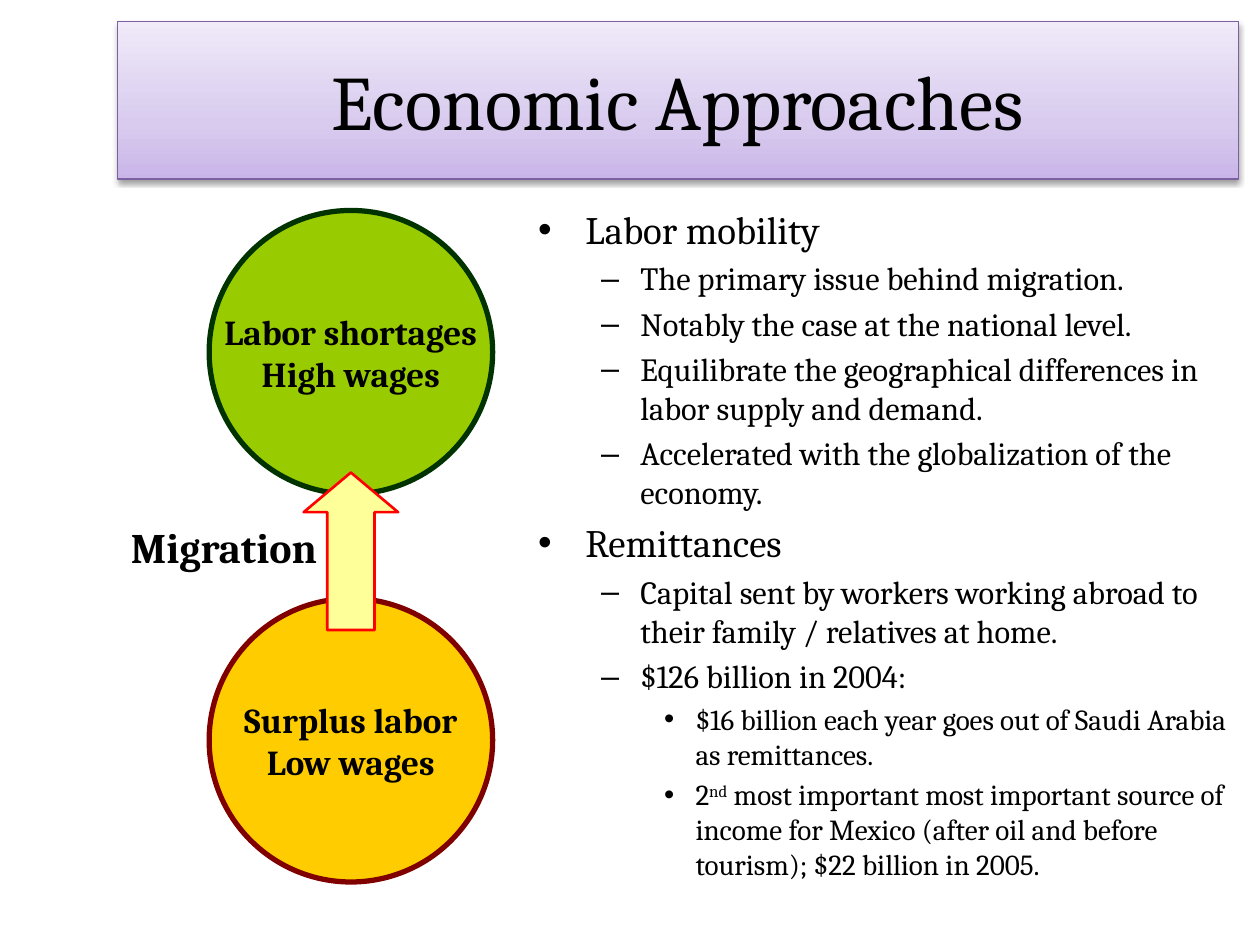
import copy
from dataclasses import dataclass

import pptx
import pptx.util
import pptx.dml.color
import pptx.enum.shapes
import pptx.enum.text
import pptx.oxml
import pptx.oxml.ns

Inches = pptx.util.Inches
Pt = pptx.util.Pt
RGB = pptx.dml.color.RGBColor
Shape = pptx.enum.shapes.MSO_SHAPE
Align = pptx.enum.text.PP_ALIGN
Anchor = pptx.enum.text.MSO_ANCHOR
Fit = pptx.enum.text.MSO_AUTO_SIZE

FONT = "Cambria"
BLACK = RGB(0, 0, 0)
PURPLE = RGB(0x7D, 0x60, 0xA0)
GREEN = RGB(0x99, 0xCC, 0x00)
FOREST = RGB(0x00, 0x33, 0x00)
GOLD = RGB(0xFF, 0xCC, 0x00)
MAROON = RGB(0x80, 0x00, 0x00)
CREAM = RGB(0xFF, 0xFF, 0x99)
RED = RGB(0xFF, 0x00, 0x00)
FADE = [(0, RGB(0xC9, 0xB5, 0xE8)), (0.35, RGB(0xD8, 0xCB, 0xEE)),
        (1, RGB(0xF0, 0xEA, 0xF9))]
SIZES = [22.2, 18.5, 16.6]


@dataclass
class Node:
    top: float
    fill: RGB
    edge: RGB
    text: str


@dataclass
class Point:
    level: int
    texts: list[str]  # every second text is raised


NODES = [
    Node(1.67, GREEN, FOREST, "Labor shortages\nHigh wages"),
    Node(4.75, GOLD, MAROON, "Surplus labor\nLow wages"),
]
POINTS = [
    Point(0, ["Labor mobility"]),
    Point(1, ["The primary issue behind migration."]),
    Point(1, ["Notably the case at the national level."]),
    Point(1, ["Equilibrate the geographical differences in labor supply and demand."]),
    Point(1, ["Accelerated with the globalization of the economy."]),
    Point(0, ["Remittances"]),
    Point(1, ["Capital sent by workers working abroad to their family / relatives at home."]),
    Point(1, ["$126 billion in 2004:"]),
    Point(2, ["$16 billion each year goes out of Saudi Arabia as remittances."]),
    Point(2, ["2", "nd", " most important most important source of income for Mexico "
              "(after oil and before tourism); $22 billion in 2005."]),
]


def place(shape, left: float, top: float, width: float, height: float) -> None:
    shape.left, shape.top = Inches(left), Inches(top)
    shape.width, shape.height = Inches(width), Inches(height)


def style(para, size: float, bold: bool = False) -> None:
    for run in para.runs:
        run.font.name = FONT
        run.font.size = Pt(size)
        run.font.bold = bold
        run.font.color.rgb = BLACK


def paint(shape, fill: RGB, edge: RGB, width: float) -> None:
    shape.fill.solid()
    shape.fill.fore_color.rgb = fill
    shape.line.color.rgb = edge
    shape.line.width = Pt(width)
    shape.shadow.inherit = False


def shade(shape) -> None:
    """Give the shape the upward fade, thin edge and soft shadow."""
    shape.fill.gradient()
    shape.fill.gradient_angle = 90
    first = shape.fill.gradient_stops[0]._gs
    first.addnext(copy.deepcopy(first))
    for stop, (pos, color) in zip(shape.fill.gradient_stops, FADE):
        stop.position = pos
        stop.color.rgb = color
    shape.line.color.rgb = PURPLE
    shape.line.width = Pt(0.75)
    shape.shadow.inherit = False
    glow = pptx.oxml.parse_xml(
        f'<a:outerShdw {pptx.oxml.ns.nsdecls("a")} blurRad="{Pt(3.1)}" '
        f'dist="{Pt(1.6)}" dir="5400000" rotWithShape="0"><a:srgbClr val="000000">'
        '<a:alpha val="38000"/></a:srgbClr></a:outerShdw>')
    shape._element.spPr.find(pptx.oxml.ns.qn("a:effectLst")).append(glow)


def head(shape) -> None:
    place(shape, 0.93, 0.17, 8.9, 1.25)
    shade(shape)
    frame = shape.text_frame
    frame.text = "Economic Approaches"
    frame.vertical_anchor = Anchor.MIDDLE
    frame.paragraphs[0].alignment = Align.CENTER
    style(frame.paragraphs[0], 44)


def fill_list(shape) -> None:
    place(shape, 4.17, 1.58, 5.68, 5.75)
    frame = shape.text_frame
    frame.auto_size = Fit.NONE
    for i, point in enumerate(POINTS):
        para = frame.add_paragraph() if i else frame.paragraphs[0]
        para.level = point.level
        for j, text in enumerate(point.texts):
            run = para.add_run()
            run.text = text
            if j % 2:
                run._r.get_or_add_rPr().set("baseline", "30000")
        style(para, SIZES[point.level])


def draw_node(slide, node: Node) -> None:
    disc = slide.shapes.add_shape(Shape.OVAL, Inches(1.66), Inches(node.top),
                                  Inches(2.25), Inches(2.25))
    paint(disc, node.fill, node.edge, 3)
    frame = disc.text_frame
    frame.text = node.text
    frame.word_wrap = False
    frame.vertical_anchor = Anchor.MIDDLE
    for para in frame.paragraphs:
        para.alignment = Align.CENTER
        style(para, 20, True)


def draw_flow(slide) -> None:
    arrow = slide.shapes.add_shape(Shape.UP_ARROW, Inches(2.41), Inches(3.75),
                                   Inches(0.75), Inches(1.25))
    arrow.adjustments[0] = 0.5
    arrow.adjustments[1] = 0.42
    paint(arrow, CREAM, RED, 1.5)
    label = slide.shapes.add_textbox(Inches(0.94), Inches(4.09),
                                     Inches(1.72), Inches(0.5))
    frame = label.text_frame
    frame.text = "Migration"
    frame.word_wrap = False
    frame.auto_size = Fit.SHAPE_TO_FIT_TEXT
    style(frame.paragraphs[0], 24, True)


def main() -> None:
    deck = pptx.Presentation()
    deck.slide_width, deck.slide_height = Inches(10), Inches(7.5)
    slide = deck.slides.add_slide(deck.slide_layouts[1])
    head(slide.shapes.title)
    fill_list(slide.placeholders[1])
    for node in NODES:
        draw_node(slide, node)
    draw_flow(slide)
    deck.save("out.pptx")


if __name__ == "__main__":
    main()
